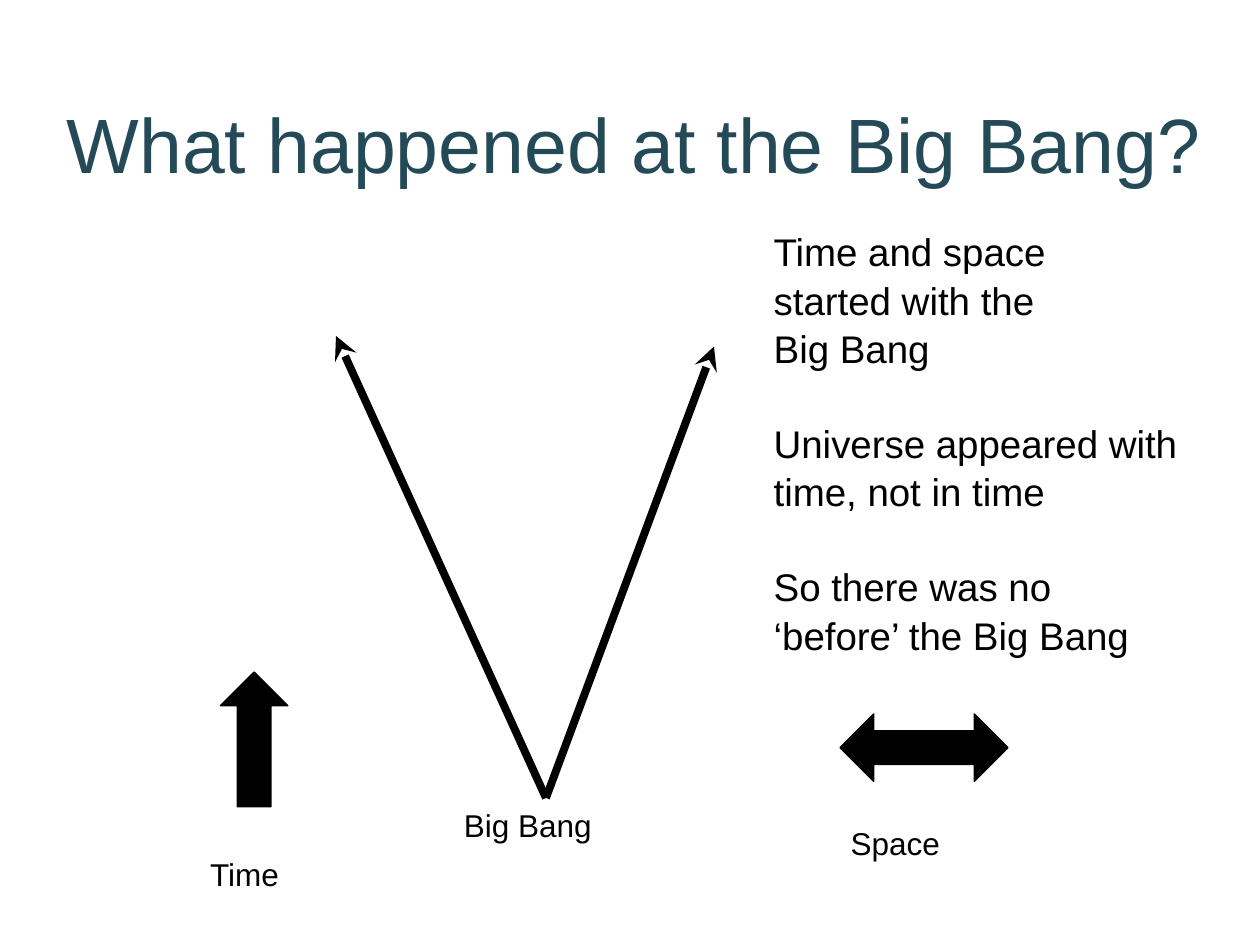
from dataclasses import dataclass

from lxml.etree import SubElement
from pptx import Presentation
from pptx.dml.color import RGBColor
from pptx.enum.shapes import MSO_CONNECTOR as Connector, MSO_SHAPE as Preset
from pptx.enum.text import MSO_ANCHOR as Anchor, PP_ALIGN as Align
from pptx.oxml.ns import qn
from pptx.util import Pt


@dataclass(frozen=True)
class Theme:
    font: str = "Arial"
    title_color: RGBColor = RGBColor(0x24, 0x4A, 0x58)
    ink: RGBColor = RGBColor(0, 0, 0)
    paper: RGBColor = RGBColor(255, 255, 255)
    title_size: int = 44
    body_size: int = 22
    label_size: int = 18
    line_spacing: float = 1.05
    body_gap: float = 26.5


theme = Theme()
deck = Presentation()
deck.slide_width, deck.slide_height = Pt(720), Pt(540)
page = deck.slides.add_slide(deck.slide_layouts[6])
page.background.fill.solid()
page.background.fill.fore_color.rgb = theme.paper


def add_text(bounds, groups, size, color=theme.ink, spacing=theme.line_spacing):
    """Add a text box; each group of lines after the first follows a gap."""
    box = page.shapes.add_textbox(*map(Pt, bounds))
    frame = box.text_frame
    frame.word_wrap = True
    para = None
    for group_index, lines in enumerate(groups):
        for line_index, line in enumerate(lines):
            para = frame.add_paragraph() if para else frame.paragraphs[0]
            para.line_spacing = spacing
            if group_index and line_index == 0:
                para.space_before = Pt(theme.body_gap)
            span = para.add_run()
            span.text = line
            span.font.name = theme.font
            span.font.size = Pt(size)
            span.font.color.rgb = color
    return frame


title = add_text((13, 6.5, 699, 105), [["What happened at the Big Bang?"]],
                 theme.title_size, theme.title_color, spacing=1.0)
title.vertical_anchor = Anchor.BOTTOM
title.paragraphs[0].alignment = Align.CENTER

# Block arrows for the two axes
for preset, bounds, adjustments in (
    (Preset.UP_ARROW, (126, 384, 38.5, 77), (0.5, 0.5)),
    (Preset.LEFT_RIGHT_ARROW, (480, 408, 96, 38.5), (0.5, 0.5)),
):
    arrow = page.shapes.add_shape(preset, *map(Pt, bounds))
    arrow.shadow.inherit = False
    for index, value in enumerate(adjustments):
        arrow.adjustments[index] = value
    arrow.fill.solid()
    arrow.fill.fore_color.rgb = theme.ink
    arrow.line.color.rgb = theme.ink
    arrow.line.width = Pt(0.75)

# Edges of the expanding universe
origin = (312, 456)
for tip in ((192, 192), (408, 198)):
    edge = page.shapes.add_connector(Connector.STRAIGHT, *map(Pt, origin + tip))
    edge.line.color.rgb = theme.ink
    edge.line.width = Pt(4.5)
    SubElement(edge.line._get_or_add_ln(), qn("a:tailEnd"), type="stealth")
    SubElement(edge._element.spPr, qn("a:effectLst"))

for label, bounds in (
    ("Time", (113, 484, 68, 36)),
    ("Space", (479, 466, 83, 36)),
    ("Big Bang", (258, 456, 112, 36)),
):
    add_text(bounds, [[label]], theme.label_size)

add_text(
    (435, 125.5, 255.5, 247),
    [
        ["Time and space", "started with the", "Big Bang"],
        ["Universe appeared with time, not in time"],
        ["So there was no", "‘before’ the Big Bang"],
    ],
    theme.body_size,
)

deck.save("out.pptx")
